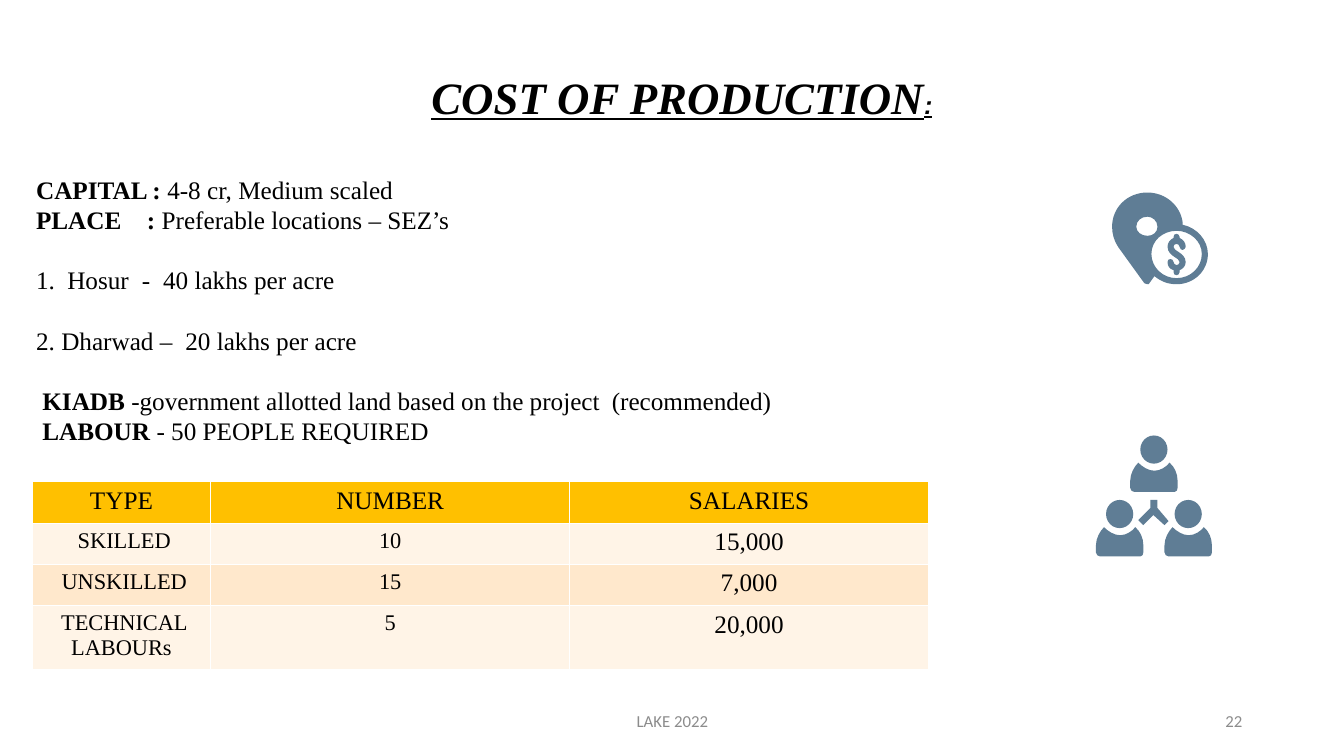
from lxml.etree import SubElement
from pptx import Presentation
from pptx.dml.color import RGBColor
from pptx.enum.shapes import MSO_SHAPE
from pptx.enum.text import MSO_ANCHOR, PP_ALIGN
from pptx.oxml.ns import qn
from pptx.util import Inches, Pt

# Content
SERIF, SANS, LABEL = "Times New Roman", "Arial", "Calibri"
BLACK, GREY, STEEL, WHITE = "000000", "8C8C8C", "5F7D95", "FFFFFF"
TITLE = [("COST OF PRODUCTION", 32, SERIF), (":", 18, SANS)]
# bold text, plain text, tab stops, blank lines' worth of space before
BODY = [
    ("CAPITAL : ", "4-8 cr, Medium scaled", [], 0),
    ("PLACE\t: ", "Preferable locations – SEZ’s", [1.1], 0),
    ("", "1.\tHosur\t-\t40 lakhs per acre", [0.31, 1.05, 1.26], 1),
    ("", "2. Dharwad –\t20 lakhs per acre", [1.48], 1),
    (" KIADB", " -government allotted land based on the project\t(recommended)",
     [5.71], 1),
    (" LABOUR ", "- 50 PEOPLE REQUIRED", [], 0),
]
LINE = 21.6
TABLE = [
    ("TYPE", "NUMBER", "SALARIES"),
    (" SKILLED", "10", "15,000"),
    (" UNSKILLED", "15", "7,000"),
    (" TECHNICAL LABOURs", "5", "20,000"),
]
ROW_FILLS = ["FFC000", "FFF4E7", "FFE8CC", "FFF4E7"]
COL_WIDTHS = [1.77, 3.56, 3.56]
ROW_HEIGHTS = [0.41, 0.41, 0.41, 0.62]

# Icon outlines in inches: a start point, then lines (2 numbers) or curves (6)
PIN = [(11.38, 1.91), (11.18, 1.91, 11.03, 2.06, 11.03, 2.25),
       (11.03, 2.32, 11.05, 2.39, 11.09, 2.45), (11.35, 2.81),
       (11.36, 2.82, 11.37, 2.82, 11.38, 2.82),
       (11.39, 2.82, 11.4, 2.82, 11.4, 2.81), (11.45, 2.74),
       (11.51, 2.79, 11.58, 2.82, 11.67, 2.82),
       (11.84, 2.82, 11.98, 2.69, 11.98, 2.52),
       (11.98, 2.38, 11.87, 2.26, 11.73, 2.23), (11.73, 2.21),
       (11.71, 2.04, 11.56, 1.91, 11.38, 1.91)]
PIN_HOLE = [(11.38, 2.15), (11.43, 2.15, 11.48, 2.19, 11.48, 2.25),
            (11.48, 2.3, 11.44, 2.34, 11.38, 2.34),
            (11.32, 2.34, 11.27, 2.3, 11.27, 2.25),
            (11.27, 2.19, 11.32, 2.15, 11.38, 2.15)]
COIN_HOLE = [(11.67, 2.29), (11.8, 2.29, 11.92, 2.39, 11.92, 2.52),
             (11.92, 2.65, 11.81, 2.76, 11.67, 2.76),
             (11.53, 2.76, 11.42, 2.65, 11.42, 2.52),
             (11.42, 2.39, 11.53, 2.29, 11.67, 2.29)]
DOLLAR = [(11.67, 2.32), (11.65, 2.32, 11.64, 2.33, 11.64, 2.35),
          (11.64, 2.36), (11.6, 2.38, 11.58, 2.41, 11.58, 2.45),
          (11.58, 2.5, 11.62, 2.53, 11.65, 2.55),
          (11.67, 2.56, 11.7, 2.58, 11.7, 2.6),
          (11.7, 2.62, 11.68, 2.63, 11.67, 2.63),
          (11.65, 2.63, 11.64, 2.61, 11.64, 2.6),
          (11.64, 2.58, 11.62, 2.57, 11.61, 2.57),
          (11.59, 2.57, 11.58, 2.58, 11.58, 2.6),
          (11.58, 2.64, 11.6, 2.67, 11.64, 2.68), (11.64, 2.7),
          (11.64, 2.72, 11.65, 2.73, 11.67, 2.73),
          (11.68, 2.73, 11.7, 2.72, 11.7, 2.7), (11.7, 2.68),
          (11.73, 2.67, 11.76, 2.64, 11.76, 2.6),
          (11.76, 2.55, 11.72, 2.52, 11.69, 2.5),
          (11.66, 2.48, 11.64, 2.47, 11.64, 2.45),
          (11.64, 2.43, 11.65, 2.42, 11.67, 2.42),
          (11.68, 2.42, 11.7, 2.43, 11.7, 2.45),
          (11.7, 2.47, 11.72, 2.48, 11.73, 2.48),
          (11.74, 2.48, 11.76, 2.46, 11.76, 2.45),
          (11.76, 2.41, 11.74, 2.38, 11.7, 2.36), (11.7, 2.35),
          (11.7, 2.33, 11.68, 2.32, 11.67, 2.32)]
PEOPLE = [(10.87, 5.23), (11.21, 4.59), (11.55, 5.23)]
SHOULDERS = [(0.08, 0), (0.04, 0.04, 0, 0.11, 0, 0.18), (0, 0.25),
             (0, 0.27, 0.02, 0.29, 0.04, 0.29), (0.44, 0.29),
             (0.46, 0.29, 0.47, 0.27, 0.47, 0.25), (0.47, 0.18),
             (0.47, 0.11, 0.44, 0.04, 0.39, 0),
             (0.36, 0.04, 0.3, 0.08, 0.24, 0.08),
             (0.18, 0.08, 0.12, 0.04, 0.08, 0)]
FORK = [(11.41, 4.96), (11.41, 5.04), (11.29, 5.16), (11.34, 5.21),
        (11.44, 5.11), (11.55, 5.21), (11.59, 5.17), (11.48, 5.04),
        (11.48, 4.96)]

prs = Presentation()
prs.slide_width, prs.slide_height = Inches(13.33), Inches(7.5)
s = prs.slides.add_slide(prs.slide_layouts[6])


# Text helpers
def rgb(value):
    return RGBColor.from_string(value)


def add_run(p, text, size, font, color=BLACK, bold=False):
    r = p.add_run()
    r.text = text
    r.font.size, r.font.name, r.font.bold = Pt(size), font, bold
    r.font.color.rgb = rgb(color)
    return r


def add_box(x, y, w, h, anchor=MSO_ANCHOR.MIDDLE):
    tf = s.shapes.add_textbox(*map(Inches, (x, y, w, h))).text_frame
    tf.word_wrap, tf.vertical_anchor = True, anchor
    return tf


# Outline helpers
def paint(sp):
    sp.shadow.inherit = False
    sp.fill.solid()
    sp.fill.fore_color.rgb = rgb(STEEL)
    sp.line.fill.background()


def draw(group, *outlines, dx=0, dy=0):
    # Every outline spans its end points, so these alone set the frame
    contours = [[[Inches(v + (dy if i % 2 else dx)) for i, v in enumerate(seg)]
                 for seg in outline] for outline in outlines]
    builder = group.shapes.build_freeform(*contours[0][0])
    for k, contour in enumerate(contours):
        if k:
            builder.move_to(*contour[0])
        builder.add_line_segments([seg[-2:] for seg in contour[1:]], close=True)
    sp = builder.convert_to_shape()
    paint(sp)
    # Turn the segments with control points into curves
    segments = [seg for contour in contours for seg in contour[1:]]
    for line, seg in zip(list(sp._element.iter(qn("a:lnTo"))), segments):
        if len(seg) == 6:
            curve = line.makeelement(qn("a:cubicBezTo"))
            for x, y in zip(seg[::2], seg[1::2]):
                SubElement(curve, qn("a:pt"), x=str(x - sp.left), y=str(y - sp.top))
            line.getparent().replace(line, curve)


# Body text
tf = add_box(0.26, 0.43, 11.74, 5.59)
tf.margin_bottom = Inches(0.35)
for i, (bold, plain, tabs, gap) in enumerate(BODY):
    p = tf.paragraphs[0] if i == 0 else tf.add_paragraph()
    p.line_spacing = Pt(LINE)
    if gap:
        p.space_before = Pt(gap * LINE)
    if tabs:
        tab_list = SubElement(p._p.get_or_add_pPr(), qn("a:tabLst"))
        for pos in tabs:
            SubElement(tab_list, qn("a:tab"), pos=str(Inches(pos)), algn="l")
    if bold:
        add_run(p, bold, 18, SERIF, bold=True)
    add_run(p, plain, 18, SERIF)

# Title
p = add_box(4.18, 0.68, 6.69, 0.62, MSO_ANCHOR.TOP).paragraphs[0]
p.line_spacing = 0.95
for text, size, font in TITLE:
    r = add_run(p, text, size, font, bold=True)
    r.font.italic = r.font.underline = True

# Location and money icon
place_icon = s.shapes.add_group_shape()
draw(place_icon, DOLLAR)
draw(place_icon, PIN_HOLE, COIN_HOLE, PIN)

# Team icon
team_icon = s.shapes.add_group_shape()
for x, y in PEOPLE:
    paint(team_icon.shapes.add_shape(
        MSO_SHAPE.OVAL, *map(Inches, (x + 0.1, y - 0.27, 0.27, 0.28))))
    draw(team_icon, SHOULDERS, dx=x, dy=y)
draw(team_icon, FORK)

# Labour table
table = s.shapes.add_table(len(TABLE), len(COL_WIDTHS), Inches(0.32), Inches(4.78),
                           Inches(sum(COL_WIDTHS)), Inches(sum(ROW_HEIGHTS))).table
for col, width in zip(table.columns, COL_WIDTHS):
    col.width = Inches(width)
for i, (row, values) in enumerate(zip(table.rows, TABLE)):
    row.height = Inches(ROW_HEIGHTS[i])
    for j, (cell, text) in enumerate(zip(row.cells, values)):
        tcPr = cell._tc.get_or_add_tcPr()
        for side in ("lnL", "lnR", "lnT", "lnB"):
            ln = SubElement(tcPr, qn("a:" + side), w=str(Pt(1)))
            SubElement(SubElement(ln, qn("a:solidFill")), qn("a:srgbClr"), val=WHITE)
        cell.fill.solid()
        cell.fill.fore_color.rgb = rgb(ROW_FILLS[i])
        p = cell.text_frame.paragraphs[0]
        p.alignment = PP_ALIGN.CENTER
        add_run(p, text, 18 if i == 0 or j == 2 else 16, SERIF)

# Footer
for text, x, w, align in [("LAKE 2022", 4.42, 4.5, PP_ALIGN.CENTER),
                          ("22", 9.42, 3, PP_ALIGN.RIGHT)]:
    p = add_box(x, 6.95, w, 0.4).paragraphs[0]
    p.alignment = align
    add_run(p, text, 12, LABEL, GREY)

prs.save("out.pptx")
